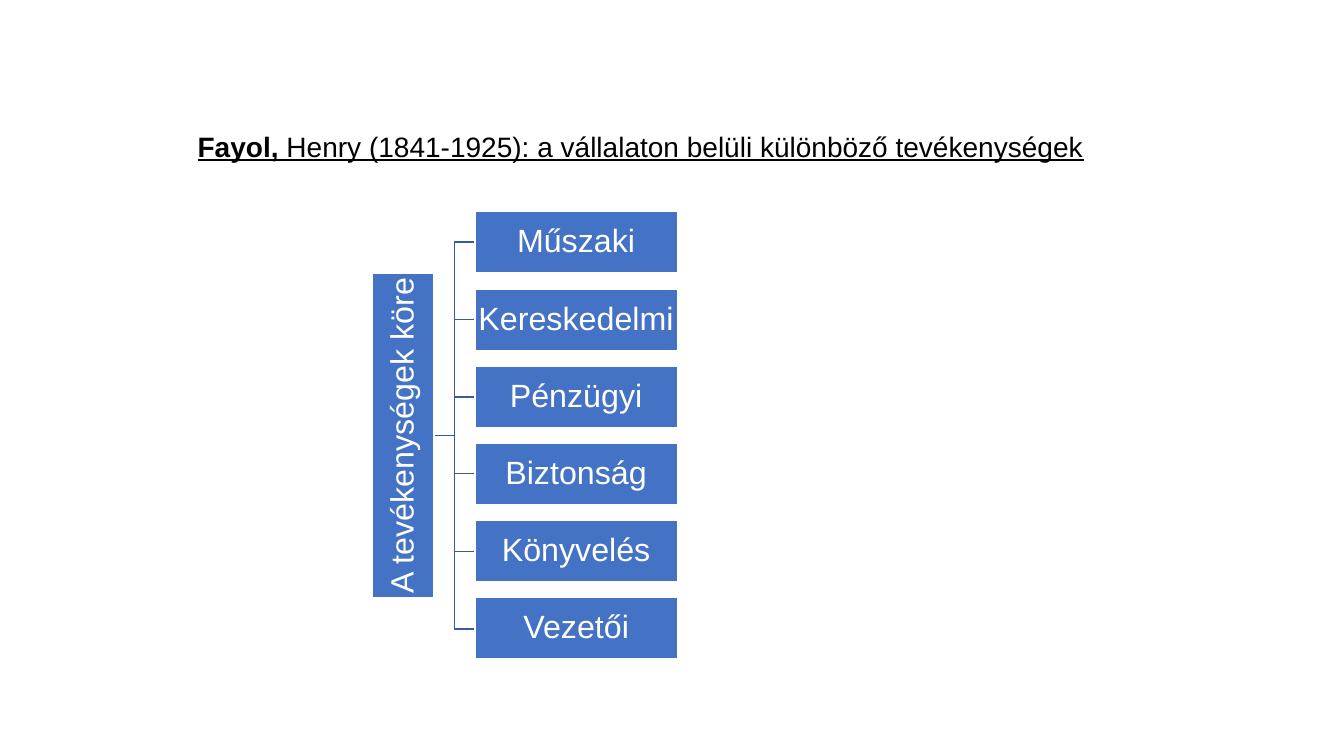
import pptx
import pptx.util
import pptx.dml.color
import pptx.enum.text
import pptx.enum.shapes

# Content
HEADING = [
    ("Fayol, ", True),
    ("Henry (1841-1925): a vállalaton belüli különböző tevékenységek", False),
]
ROOT = "A tevékenységek köre"
ACTIVITIES = ["Műszaki", "Kereskedelmi", "Pénzügyi", "Biztonság", "Könyvelés", "Vezetői"]

# Layout in px, 100 to the inch
PX = 9144
SLIDE_WIDTH, SLIDE_HEIGHT = 1333, 750
HEADING_BOX = (186, 123, 980, 44)
BOX_HEIGHT = 61
ROOT_CENTRE_X, ROOT_LENGTH = 400, 322
ACTIVITY_LEFT, ACTIVITY_WIDTH = 471, 201
FIRST_TOP, LAST_TOP = 210, 593
INSET = 2

FONT = "Arial"
BLUE, LINE_BLUE, WHITE, BLACK = "4472C4", "365B9D", "FFFFFF", "000000"


def px(value):
    return pptx.util.Emu(round(value * PX))


def color(value):
    return pptx.dml.color.RGBColor.from_string(value)


def set_line(shape, value):
    shape.line.color.rgb = color(value)
    shape.line.width = pptx.util.Pt(1)
    shape.shadow.inherit = False


def add_run(paragraph, text, size, value):
    run = paragraph.add_run()
    run.text = text
    run.font.name = FONT
    run.font.size = pptx.util.Pt(size)
    run.font.color.rgb = color(value)
    return run


def add_box(slide, text, left, top, width, rotation=0):
    shape = slide.shapes.add_shape(
        pptx.enum.shapes.MSO_SHAPE.RECTANGLE,
        px(left), px(top), px(width), px(BOX_HEIGHT))
    shape.rotation = rotation
    shape.fill.solid()
    shape.fill.fore_color.rgb = color(BLUE)
    set_line(shape, WHITE)
    frame = shape.text_frame
    frame.word_wrap = True
    frame.vertical_anchor = pptx.enum.text.MSO_ANCHOR.MIDDLE
    frame.margin_left = frame.margin_right = px(INSET)
    frame.margin_top = frame.margin_bottom = px(INSET)
    paragraph = frame.paragraphs[0]
    paragraph.alignment = pptx.enum.text.PP_ALIGN.CENTER
    paragraph.line_spacing = 0.9
    add_run(paragraph, text, 23, WHITE)


def add_elbow(slide, left, start_y, right, end_y):
    middle = (left + right) / 2
    builder = slide.shapes.build_freeform(left, start_y, scale=PX)
    builder.add_line_segments(
        [(middle, start_y), (middle, end_y), (right, end_y)], close=False)
    shape = builder.convert_to_shape()
    shape.fill.background()
    set_line(shape, LINE_BLUE)


def add_heading(slide):
    title = slide.shapes.title
    title.left, title.top, title.width, title.height = map(px, HEADING_BOX)
    frame = title.text_frame
    frame.word_wrap = True
    frame.auto_size = pptx.enum.text.MSO_AUTO_SIZE.SHAPE_TO_FIT_TEXT
    frame.vertical_anchor = pptx.enum.text.MSO_ANCHOR.TOP
    paragraph = frame.paragraphs[0]
    paragraph.alignment = pptx.enum.text.PP_ALIGN.LEFT
    for text, bold in HEADING:
        run = add_run(paragraph, text, 20, BLACK)
        run.font.bold = bold
        run.font.underline = True


def main():
    presentation = pptx.Presentation()
    presentation.slide_width = px(SLIDE_WIDTH)
    presentation.slide_height = px(SLIDE_HEIGHT)
    slide = presentation.slides.add_slide(presentation.slide_layouts[5])
    add_heading(slide)

    # Rows share one pitch; the root is centred on them
    pitch = (LAST_TOP - FIRST_TOP) / (len(ACTIVITIES) - 1)
    tops = [FIRST_TOP + pitch * index for index in range(len(ACTIVITIES))]
    root_y = (FIRST_TOP + LAST_TOP + BOX_HEIGHT) / 2
    root_right = ROOT_CENTRE_X + BOX_HEIGHT / 2

    # Connecting elbows, behind the boxes
    for top in tops:
        add_elbow(slide, root_right, root_y, ACTIVITY_LEFT, top + BOX_HEIGHT / 2)

    # Root and activity boxes
    add_box(slide, ROOT, ROOT_CENTRE_X - ROOT_LENGTH / 2,
            root_y - BOX_HEIGHT / 2, ROOT_LENGTH, rotation=270)
    for text, top in zip(ACTIVITIES, tops):
        add_box(slide, text, ACTIVITY_LEFT, top, ACTIVITY_WIDTH)

    presentation.save("out.pptx")


if __name__ == "__main__":
    main()
